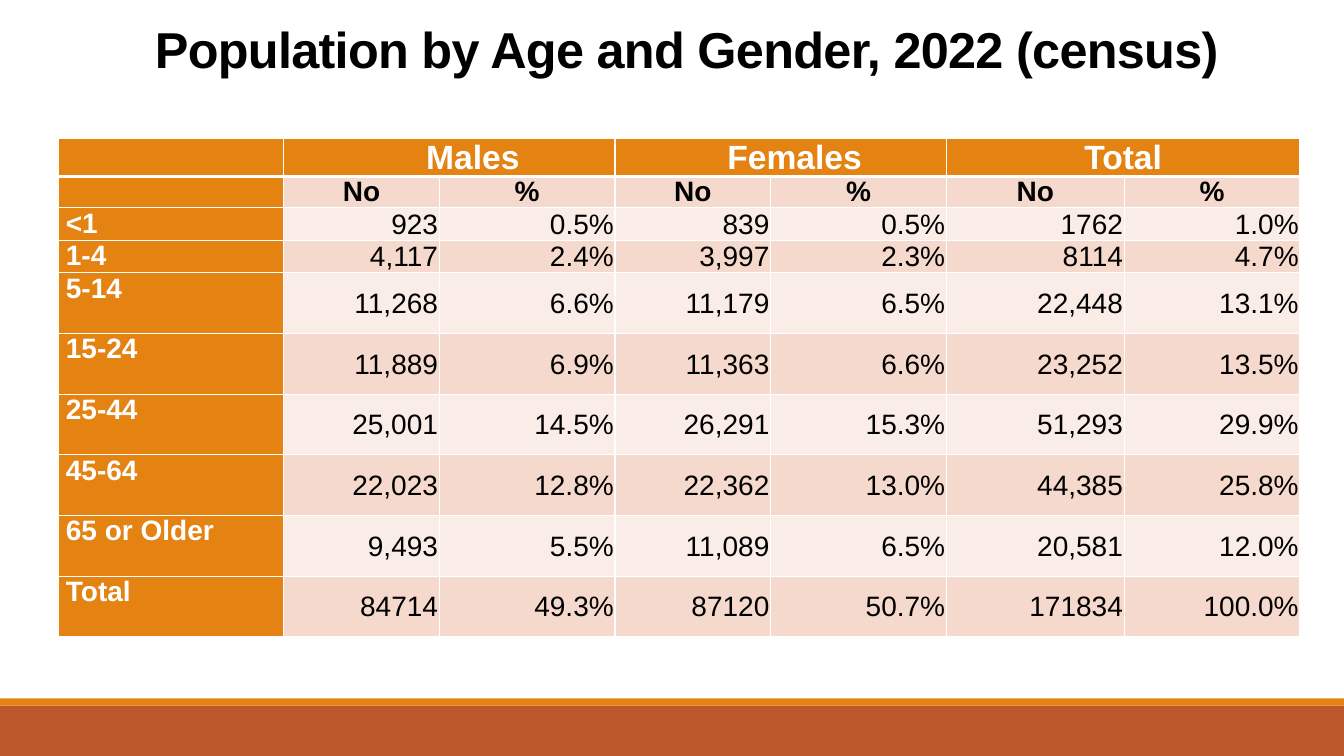
from lxml import etree
from pptx import Presentation
from pptx.dml.color import RGBColor
from pptx.enum import shapes, text
from pptx.oxml import ns
from pptx.util import Cm, Pt

ORANGE, RUST = "E48312", "BD582C"
BANDS = "F5D9CC", "FAEDE7"
WHITE, BLACK = "FFFFFF", "000000"
WIDTHS = 5.67, 3.92, 4.43, 3.92, 4.43, 4.48, 4.43
HEIGHTS = [0.94, 0.79, 0.81, 0.81] + [1.53] * 6
# Heading of each column pair, with the indent that shifts it to the right
GROUPS = ("Males", 1.18), ("Females", 0.7), ("Total", 0)
ROWS = [
    ("<1", "923", "0.5%", "839", "0.5%", "1762", "1.0%"),
    ("1-4", "4,117", "2.4%", "3,997", "2.3%", "8114", "4.7%"),
    ("5-14", "11,268", "6.6%", "11,179", "6.5%", "22,448", "13.1%"),
    ("15-24", "11,889", "6.9%", "11,363", "6.6%", "23,252", "13.5%"),
    ("25-44", "25,001", "14.5%", "26,291", "15.3%", "51,293", "29.9%"),
    ("45-64", "22,023", "12.8%", "22,362", "13.0%", "44,385", "25.8%"),
    ("65 or Older", "9,493", "5.5%", "11,089", "6.5%", "20,581", "12.0%"),
    ("Total", "84714", "49.3%", "87120", "50.7%", "171834", "100.0%"),
]


def paint(fill, hue):
    fill.solid()
    fill.fore_color.rgb = RGBColor.from_string(hue)


def add_run(para, words, size, hue, bold=True):
    run = para.add_run()
    run.text = words
    run.font.name = "Arial"
    run.font.size = Pt(size)
    run.font.bold = bold
    run.font.color.rgb = RGBColor.from_string(hue)
    return run


def add_bar(slide, top, width, height, hue):
    bar = slide.shapes.add_shape(
        shapes.MSO_SHAPE.RECTANGLE, 0, Cm(top), width, Cm(height))
    paint(bar.fill, hue)
    bar.line.fill.background()
    bar.shadow.inherit = False


def set_title(slide, words):
    title = slide.shapes.title
    title.left, title.top = Cm(2.34), Cm(1.02)
    title.width, title.height = Cm(29.92), Cm(2.92)
    frame = title.text_frame
    frame.vertical_anchor = text.MSO_ANCHOR.BOTTOM
    frame.auto_size = text.MSO_AUTO_SIZE.NONE
    frame.margin_top, frame.margin_bottom = 0, Cm(1.96)
    para = frame.paragraphs[0]
    para.alignment = text.PP_ALIGN.CENTER
    para.line_spacing = 0.85
    run = add_run(para, words, 36, BLACK)
    run.font._element.set("spc", "-50")


def set_edges(cell, above, below):
    """Draw white cell borders; above and below are widths in points."""
    props = cell._tc.get_or_add_tcPr()
    sides = ("lnL", 1), ("lnR", 1), ("lnT", above), ("lnB", below)
    for spot, (side, width) in enumerate(sides):
        edge = etree.Element(ns.qn("a:" + side), w=str(Pt(width)))
        fill = etree.SubElement(edge, ns.qn("a:solidFill"))
        etree.SubElement(fill, ns.qn("a:srgbClr"), val=WHITE)
        props.insert(spot, edge)


def set_cell(cell, words, size, hue, align, bold=True, inset=0.18, shift=0):
    cell.margin_left, cell.margin_right = Cm(inset + shift), Cm(inset)
    para = cell.text_frame.paragraphs[0]
    para.alignment = align
    add_run(para, words, size, hue, bold)


def add_grid(slide):
    """Add the table with its sizes, fills and borders, still empty."""
    grid = slide.shapes.add_table(
        len(HEIGHTS), len(WIDTHS), Cm(1.48), Cm(3.5),
        Cm(sum(WIDTHS)), Cm(sum(HEIGHTS))).table
    for col, width in zip(grid.columns, WIDTHS):
        col.width = Cm(width)
    for i, height in enumerate(HEIGHTS):
        grid.rows[i].height = Cm(height)
        for j in range(len(WIDTHS)):
            cell = grid.cell(i, j)
            cell.margin_top = cell.margin_bottom = 0
            paint(cell.fill, ORANGE if i == 0 or j == 0 else BANDS[(i + 1) % 2])
            set_edges(cell, 3 if i == 1 else 1, 3 if i == 0 else 1)
    return grid


def fill_heads(grid):
    mid = text.PP_ALIGN.CENTER
    for k, (name, shift) in enumerate(GROUPS):
        col = 1 + 2 * k
        grid.cell(0, col).merge(grid.cell(0, col + 1))
        set_cell(grid.cell(0, col), name, 24, WHITE, mid, shift=shift)
        for j, unit in enumerate(("No", "%")):
            set_cell(grid.cell(1, col + j), unit, 20, BLACK, mid)


def fill_rows(grid):
    for i, (age, *counts) in enumerate(ROWS, 2):
        set_cell(grid.cell(i, 0), age, 20, WHITE, text.PP_ALIGN.JUSTIFY)
        for j, count in enumerate(counts, 1):
            cell = grid.cell(i, j)
            cell.vertical_anchor = text.MSO_ANCHOR.MIDDLE
            cell.margin_top = Cm(0.03)
            set_cell(cell, count, 20, BLACK, text.PP_ALIGN.RIGHT,
                     bold=False, inset=0.03)


def main():
    deck = Presentation()
    deck.slide_width, deck.slide_height = Cm(33.87), Cm(19.05)
    slide = deck.slides.add_slide(deck.slide_layouts[5])
    add_bar(slide, 17.78, deck.slide_width, 1.27, RUST)
    add_bar(slide, 17.6, deck.slide_width, 0.18, ORANGE)
    set_title(slide, "Population by Age and Gender, 2022 (census)")
    grid = add_grid(slide)
    fill_heads(grid)
    fill_rows(grid)
    deck.save("out.pptx")


if __name__ == "__main__":
    main()
